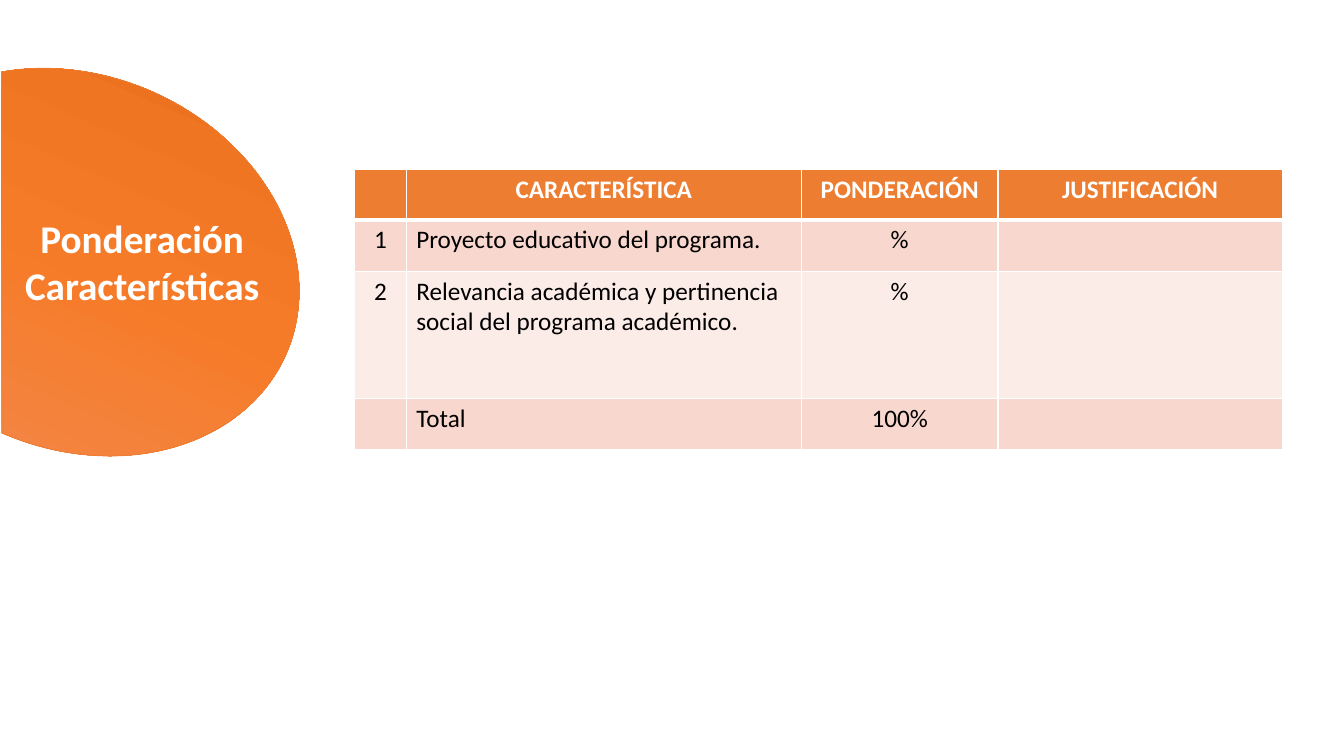
from lxml.etree import SubElement
from pptx import Presentation
from pptx.dml.color import RGBColor
from pptx.enum.shapes import MSO_SHAPE as Shape
from pptx.enum.text import MSO_AUTO_SIZE as AutoSize, PP_ALIGN as Align
from pptx.oxml.ns import qn
from pptx.util import Pt

COLORS = {
    "white": "FFFFFF", "black": "000000", "orange": "ED7D31",
    "band_dark": "F8D7CE", "band_light": "FCECE8",
    "glow_light": "F18C57", "glow_middle": "F67B28", "glow_dark": "E56C19",
}


class SlideBuilder:
    font = "Calibri"

    def __init__(self, slide):
        self.slide = slide

    def color(self, name):
        return RGBColor.from_string(COLORS[name])

    def add_text(self, paragraph, text, size, color, bold, align):
        paragraph.alignment = align
        run = paragraph.add_run()
        run.text = text
        run.font.name = self.font
        run.font.size = Pt(size)
        run.font.bold = bold
        run.font.color.rgb = self.color(color)

    def chord(self, left, top, width, height, rotation, adjustments, stops):
        shape = self.slide.shapes.add_shape(
            Shape.CHORD, Pt(left), Pt(top), Pt(width), Pt(height))
        shape.shadow.inherit = False
        shape.rotation = rotation
        for index, value in enumerate(adjustments):
            shape.adjustments[index] = value
        shape.fill.gradient()
        shape.fill.gradient_angle = 270
        stop_list = shape.element.spPr.find(".//" + qn("a:gsLst"))
        stop_list.clear()
        for position, name in stops:
            stop = SubElement(stop_list, qn("a:gs"), pos=str(position * 1000))
            SubElement(stop, qn("a:srgbClr"), val=COLORS[name])
        shape.line.color.rgb = self.color("orange")
        shape.line.width = Pt(0.5)

    def title(self, left, top, width, height, lines):
        box = self.slide.shapes.add_textbox(
            Pt(left), Pt(top), Pt(width), Pt(height))
        frame = box.text_frame
        frame.word_wrap = False
        frame.auto_size = AutoSize.SHAPE_TO_FIT_TEXT
        for index, line in enumerate(lines):
            paragraph = frame.add_paragraph() if index else frame.paragraphs[0]
            self.add_text(paragraph, line, 28, "white", True, Align.CENTER)

    def borders(self, cell, bottom):
        properties = cell._tc.get_or_add_tcPr()
        for side, width in (("L", 1), ("R", 1), ("T", 1), ("B", bottom)):
            line = SubElement(properties, qn("a:ln" + side), w=str(Pt(width)))
            fill = SubElement(line, qn("a:solidFill"))
            SubElement(fill, qn("a:srgbClr"), val=COLORS["white"])

    def table(self, left, top, widths, heights, rows):
        table = self.slide.shapes.add_table(
            len(heights), len(widths), Pt(left), Pt(top),
            Pt(sum(widths)), Pt(sum(heights))).table
        for column, width in zip(table.columns, widths):
            column.width = Pt(width)
        for row, height in zip(table.rows, heights):
            row.height = Pt(height)
        for r, texts in enumerate(rows):
            header = r == 0
            band = "orange" if header else ("band_light", "band_dark")[r % 2]
            for c, text in enumerate(texts):
                cell = table.cell(r, c)
                # Borders come before the fill in the cell properties
                self.borders(cell, 3 if header else 1)
                cell.fill.solid()
                cell.fill.fore_color.rgb = self.color(band)
                if text:
                    align = Align.LEFT if c == 1 and not header else Align.CENTER
                    self.add_text(cell.text_frame.paragraphs[0], text, 18,
                                  "white" if header else "black", header, align)


def main():
    presentation = Presentation()
    presentation.slide_width, presentation.slide_height = Pt(960), Pt(540)
    builder = SlideBuilder(
        presentation.slides.add_slide(presentation.slide_layouts[6]))

    # Table of weights
    builder.table(253.5, 121, (36.7, 282.3, 140.4, 203), (36, 36.7, 90.7, 36.7), (
        ("", "CARACTERÍSTICA", "PONDERACIÓN", "JUSTIFICACIÓN"),
        ("1", "Proyecto educativo del programa.", "%", ""),
        ("2", "Relevancia académica y pertinencia social del programa académico.",
         "%", ""),
        ("", "Total", "100%", ""),
    ))

    # Orange chord with the title
    builder.chord(-108.7, 54, 326.9, 266.4, 203.6, (26.92, 162),
                  ((0, "glow_light"), (50, "glow_middle"), (100, "glow_dark")))
    builder.title(9.4, 149.8, 184.3, 74.9, ("Ponderación", "Características"))

    presentation.save("out.pptx")


if __name__ == "__main__":
    main()
